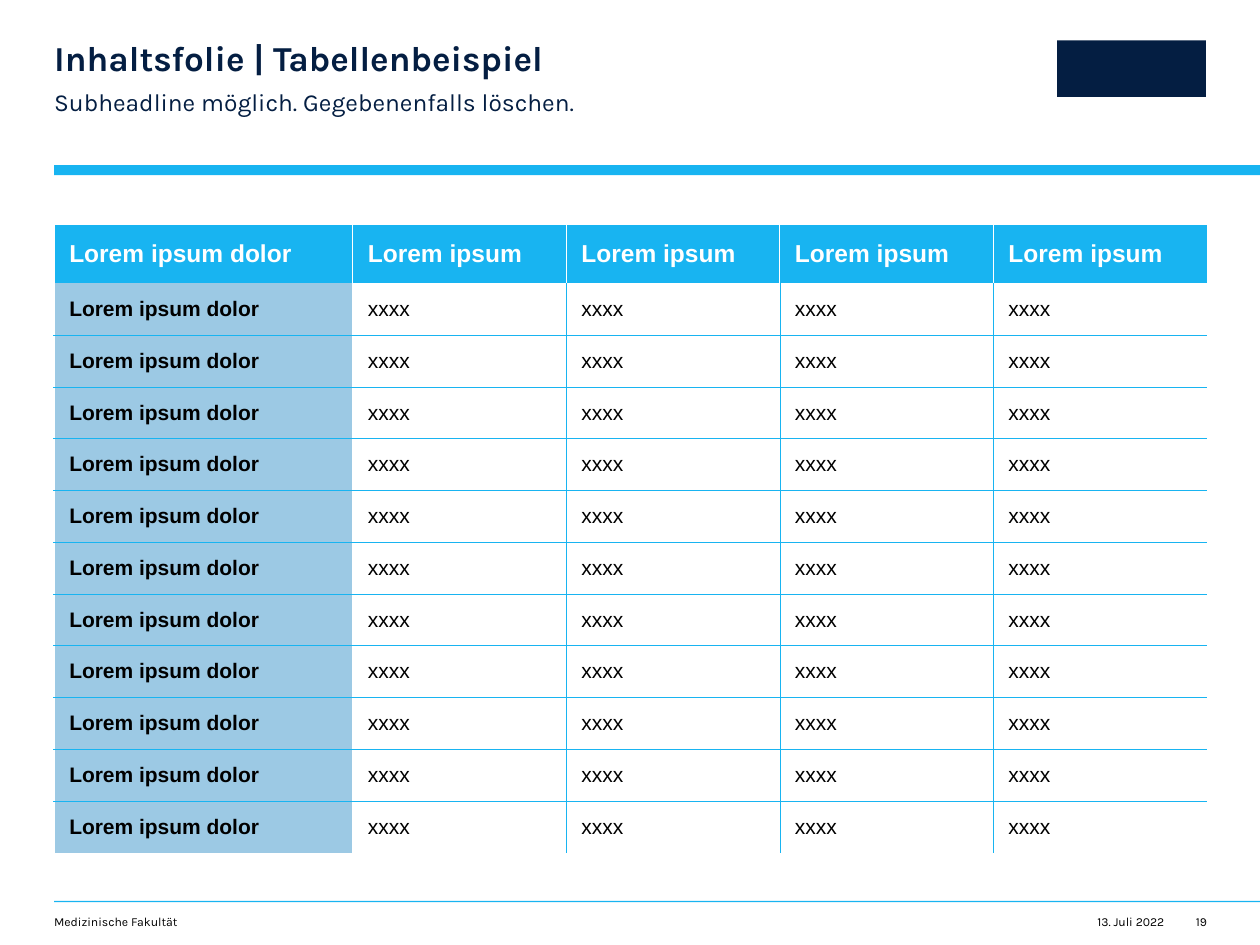
import dataclasses

import lxml.etree
import pptx
import pptx.dml.color
import pptx.enum.shapes
import pptx.enum.text
import pptx.oxml.ns
import pptx.util

Inches = pptx.util.Inches
Pt = pptx.util.Pt
Align = pptx.enum.text.PP_ALIGN
Anchor = pptx.enum.text.MSO_ANCHOR
PLAIN = "{2D5ABB26-0587-4C30-8999-92F81FD0307C}"


@dataclasses.dataclass(frozen=True)
class Theme:
    blue: str = "18B4F1"
    pale: str = "9CC9E4"
    navy: str = "041E42"
    white: str = "FFFFFF"
    black: str = "000000"
    font: str = "Karla"
    grid: str = "Arial"
    title: int = 20
    head: int = 14
    cell: int = 12
    foot: int = 7


def color(code):
    return pptx.dml.color.RGBColor.from_string(code)


def add_node(parent, tag, **attrs):
    return lxml.etree.SubElement(parent, pptx.oxml.ns.qn(tag), **attrs)


class Deck:
    def __init__(self, show, theme):
        self.theme = theme
        self.slide = show.slides.add_slide(show.slide_layouts[1])

    def label(self, para, text, size, tone, font, bold=False, align=Align.LEFT):
        para.text = text
        para.alignment = align
        para.font.name = font
        para.font.size = Pt(size)
        para.font.bold = bold
        para.font.color.rgb = color(tone)

    def frame(self, shape, right=0, wrap=True):
        """Strip the insets of a shape's text and return its first paragraph."""
        text = shape.text_frame
        text.margin_left = text.margin_top = text.margin_bottom = 0
        text.margin_right = Inches(right)
        text.vertical_anchor = Anchor.TOP
        text.word_wrap = wrap
        text.auto_size = pptx.enum.text.MSO_AUTO_SIZE.SHAPE_TO_FIT_TEXT
        return text.paragraphs[0]

    def place(self, shape, left, top, width, height):
        shape.left, shape.top = Inches(left), Inches(top)
        shape.width, shape.height = Inches(width), Inches(height)

    def title(self, text, *box):
        shape = self.slide.shapes.title
        self.place(shape, *box)
        para = self.frame(shape)
        para.line_spacing = 0.9
        self.label(para, text, self.theme.title, self.theme.navy,
                   self.theme.font, bold=True)

    def body(self, text, *box):
        shape = self.slide.placeholders[1]
        self.place(shape, *box)
        para = self.frame(shape, right=0.39)
        props = para._p.get_or_add_pPr()
        props.set("marL", "0")
        props.set("indent", "0")
        add_node(props, "a:buNone")
        para.line_spacing = 1.1
        para.space_before, para.space_after = Pt(0), Pt(8)
        self.label(para, text, self.theme.head, self.theme.navy, self.theme.font)

    def bar(self, tone, *box):
        kind = pptx.enum.shapes.MSO_SHAPE.RECTANGLE
        shape = self.slide.shapes.add_shape(kind, *map(Inches, box))
        shape.shadow.inherit = False
        shape.fill.solid()
        shape.fill.fore_color.rgb = color(tone)
        shape.line.fill.background()

    def foot(self, text, *box, align=Align.LEFT):
        shape = self.slide.shapes.add_textbox(*map(Inches, box))
        para = self.frame(shape, wrap=align == Align.LEFT)
        self.label(para, text, self.theme.foot, self.theme.black,
                   self.theme.font, align=align)

    def edge(self, cell, lines):
        """Draw cell borders; lines maps a side, in schema order, to tone and points."""
        props = cell._tc.get_or_add_tcPr()
        for spot, (side, (tone, width)) in enumerate(lines.items()):
            line = add_node(props, "a:ln" + side, w=str(Pt(width)))
            fill = add_node(line, "a:solidFill")
            add_node(fill, "a:srgbClr", val=tone)
            props.insert(spot, line)

    def rules(self, row, col, rows, cols):
        """Choose the borders of a cell from its place in the grid."""
        theme = self.theme
        thin, thick = (theme.blue, 0.25), (theme.white, 1)
        split = (theme.white, 0.5) if row == 0 else thin
        lines = {}
        if col == 0 or (col == 1 and row > 0):
            lines["L"] = thick
        else:
            lines["L"] = split
        if col < cols - 1:
            lines["R"] = thick if col == 0 and row > 0 else split
        if row != 1:
            lines["T"] = thick if row == 0 else thin
        if 0 < row < rows - 1:
            lines["B"] = thin
        return lines

    def table(self, data, widths, heights, left, top):
        theme = self.theme
        rows, cols = len(heights), len(widths)
        box = (left, top, sum(widths), sum(heights))
        shape = self.slide.shapes.add_table(rows, cols, *map(Inches, box))
        table = shape.table
        table.horz_banding = False
        table._tbl.tblPr.find(pptx.oxml.ns.qn("a:tableStyleId")).text = PLAIN
        for col, width in zip(table.columns, widths):
            col.width = Inches(width)
        for row, height in zip(table.rows, heights):
            row.height = Inches(height)
        for row, texts in enumerate(data):
            for col, text in enumerate(texts):
                cell = table.cell(row, col)
                cell.vertical_anchor = Anchor.MIDDLE
                cell.margin_left = cell.margin_right = Inches(0.12)
                cell.margin_top = cell.margin_bottom = Inches(0.04)
                head = row == 0
                if head or col == 0:
                    cell.fill.solid()
                    cell.fill.fore_color.rgb = color(theme.blue if head else theme.pale)
                else:
                    cell.fill.background()
                self.label(cell.text_frame.paragraphs[0], text,
                           theme.head if head else theme.cell,
                           theme.white if head else theme.black,
                           theme.grid, bold=head or col == 0)
                self.edge(cell, self.rules(row, col, rows, cols))


def main():
    show = pptx.Presentation()
    show.slide_width, show.slide_height = Inches(10), Inches(7.5)
    theme = Theme()
    deck = Deck(show, theme)
    left = 0.43

    deck.bar(theme.blue, left, 1.31, 10 - left, 0.08)
    deck.bar(theme.blue, left, 7.15, 10 - left, 0.01)
    deck.bar(theme.navy, 8.39, 0.32, 1.18, 0.45)

    deck.foot("13. Juli 2022", 8.67, 7.26, 0.57, 0.12, align=Align.RIGHT)
    deck.foot("Medizinische Fakultät", left, 7.26, 4.49, 0.12)
    deck.foot("19", 9.47, 7.26, 0.11, 0.12, align=Align.RIGHT)

    deck.title("Inhaltsfolie | Tabellenbeispiel", left, 0.33, 5.61, 0.3)
    deck.body("Subheadline möglich. Gegebenenfalls löschen.", left, 0.67, 5.61, 0.24)

    name, count = "Lorem ipsum dolor", 11
    data = [[name] + ["Lorem ipsum"] * 4] + [[name] + ["xxxx"] * 4] * count
    widths = [2.37] + [(9.15 - 2.37) / 4] * 4
    heights = [0.47] + [(4.99 - 0.47) / count] * count
    deck.table(data, widths, heights, left, 1.78)
    show.save("out.pptx")


if __name__ == "__main__":
    main()
